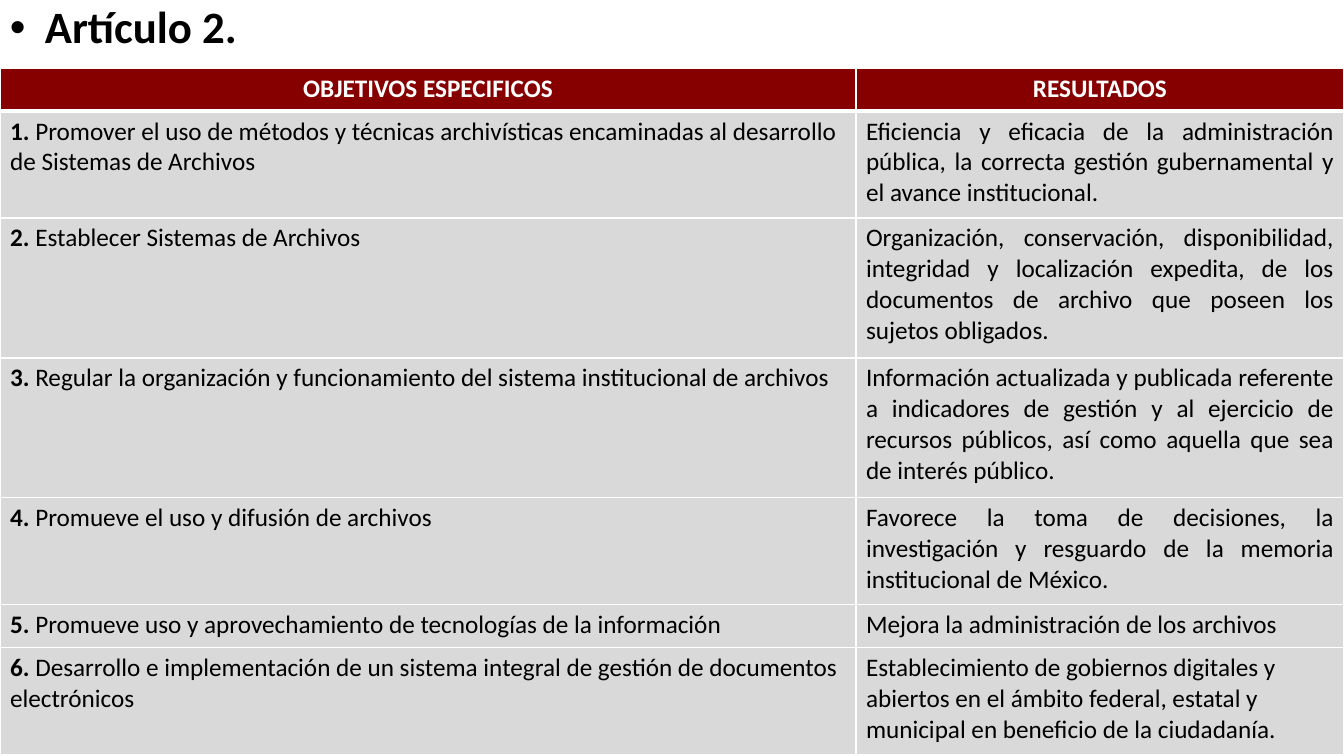
"""Build the slide listing the specific objectives and results of Article 2."""
import pptx
import pptx.dml.color
import pptx.enum.text
import pptx.oxml
import pptx.oxml.ns
import pptx.util

SLIDE_SIZE = (1344, 756)
HEADING = "Artículo 2."
HEADING_BOX = (0, 0, 1259, 48)
HEADING_INDENT = 35
TABLE_TOP = 68
COLUMN_WIDTHS = (856, 488)
LINE_COUNT_HEIGHTS = {1: 43, 3: 107, 4: 140}
FONT = "Calibri"
MAROON, GRAY, WHITE, BLACK = "860000", "D9D9D9", "FFFFFF", "000000"
LEFT = pptx.enum.text.PP_ALIGN.LEFT
CENTER = pptx.enum.text.PP_ALIGN.CENTER
JUSTIFY = pptx.enum.text.PP_ALIGN.JUSTIFY

COLUMN_TITLES = ("OBJETIVOS ESPECIFICOS", "RESULTADOS")
OBJECTIVES = [
    ("Promover el uso de métodos y técnicas archivísticas encaminadas al desarrollo de Sistemas de Archivos",
     "Eficiencia y eficacia de la administración pública, la correcta gestión gubernamental y el avance institucional.",
     3, JUSTIFY),
    ("Establecer Sistemas de Archivos",
     "Organización, conservación, disponibilidad, integridad y localización expedita, de los documentos de archivo que poseen los sujetos obligados.",
     4, JUSTIFY),
    ("Regular la organización y funcionamiento del sistema institucional de archivos",
     "Información actualizada y publicada referente a indicadores de gestión y al ejercicio de recursos públicos, así como aquella que sea de interés público.",
     4, JUSTIFY),
    ("Promueve el uso y difusión de archivos",
     "Favorece la toma de decisiones, la investigación y resguardo de la memoria institucional de México.",
     3, JUSTIFY),
    ("Promueve uso y aprovechamiento de tecnologías de la información",
     "Mejora la administración de los archivos",
     1, LEFT),
    ("Desarrollo e implementación de un sistema integral de gestión de documentos electrónicos",
     "Establecimiento de gobiernos digitales y abiertos en el ámbito federal, estatal y municipal en beneficio de la ciudadanía.",
     3, LEFT),
]


def px(length):
    return pptx.util.Emu(round(length * 914400 / 100.8))


def color(value):
    return pptx.dml.color.RGBColor.from_string(value)


def write(paragraph, parts, size, ink, alignment):
    paragraph.alignment = alignment
    for text, bold in parts:
        run = paragraph.add_run()
        run.text = text
        run.font.name = FONT
        run.font.size = pptx.util.Pt(size)
        run.font.bold = bold
        run.font.color.rgb = color(ink)


def fill_cell(cell, parts, background, ink, alignment, bottom_width):
    properties = cell._tc.get_or_add_tcPr()
    for side, width in (("L", 1), ("R", 1), ("T", 1), ("B", bottom_width)):
        properties.append(pptx.oxml.parse_xml(
            f'<a:ln{side} {pptx.oxml.ns.nsdecls("a")} w="{pptx.util.Pt(width)}">'
            f'<a:solidFill><a:srgbClr val="{WHITE}"/></a:solidFill></a:ln{side}>'))
    cell.fill.solid()
    cell.fill.fore_color.rgb = color(background)
    write(cell.text_frame.paragraphs[0], parts, 18, ink, alignment)


def add_heading(slide):
    frame = slide.shapes.add_textbox(*map(px, HEADING_BOX)).text_frame
    frame.word_wrap = True
    paragraph = frame.paragraphs[0]
    paragraph.line_spacing = 0.9
    write(paragraph, [(HEADING, True)], 32, BLACK, JUSTIFY)
    properties = paragraph._p.get_or_add_pPr()
    properties.set("marL", str(px(HEADING_INDENT)))
    properties.set("indent", str(-px(HEADING_INDENT)))
    for bullet in ('buFont {} typeface="Arial"', 'buChar {} char="•"'):
        properties.append(pptx.oxml.parse_xml(
            f'<a:{bullet.format(pptx.oxml.ns.nsdecls("a"))}/>'))


def add_objectives_table(slide):
    heights = [LINE_COUNT_HEIGHTS[1]]
    heights += [LINE_COUNT_HEIGHTS[lines] for _, _, lines, _ in OBJECTIVES]
    table = slide.shapes.add_table(
        len(heights), len(COLUMN_WIDTHS), 0, px(TABLE_TOP),
        px(sum(COLUMN_WIDTHS)), px(sum(heights))).table
    for column, width in zip(table.columns, COLUMN_WIDTHS):
        column.width = px(width)
    for row, height in zip(table.rows, heights):
        row.height = px(height)
    for index, title in enumerate(COLUMN_TITLES):
        fill_cell(table.cell(0, index), [(title, True)], MAROON, WHITE, CENTER, 3)
    for number, (objective, result, _, alignment) in enumerate(OBJECTIVES, 1):
        numbered = [(f"{number}. ", True), (objective, False)]
        fill_cell(table.cell(number, 0), numbered, GRAY, BLACK, LEFT, 1)
        fill_cell(table.cell(number, 1), [(result, False)], GRAY, BLACK, alignment, 1)


def main():
    presentation = pptx.Presentation()
    presentation.slide_width, presentation.slide_height = map(px, SLIDE_SIZE)
    slide = presentation.slides.add_slide(presentation.slide_layouts[6])
    add_heading(slide)
    add_objectives_table(slide)
    presentation.save("out.pptx")


if __name__ == "__main__":
    main()
